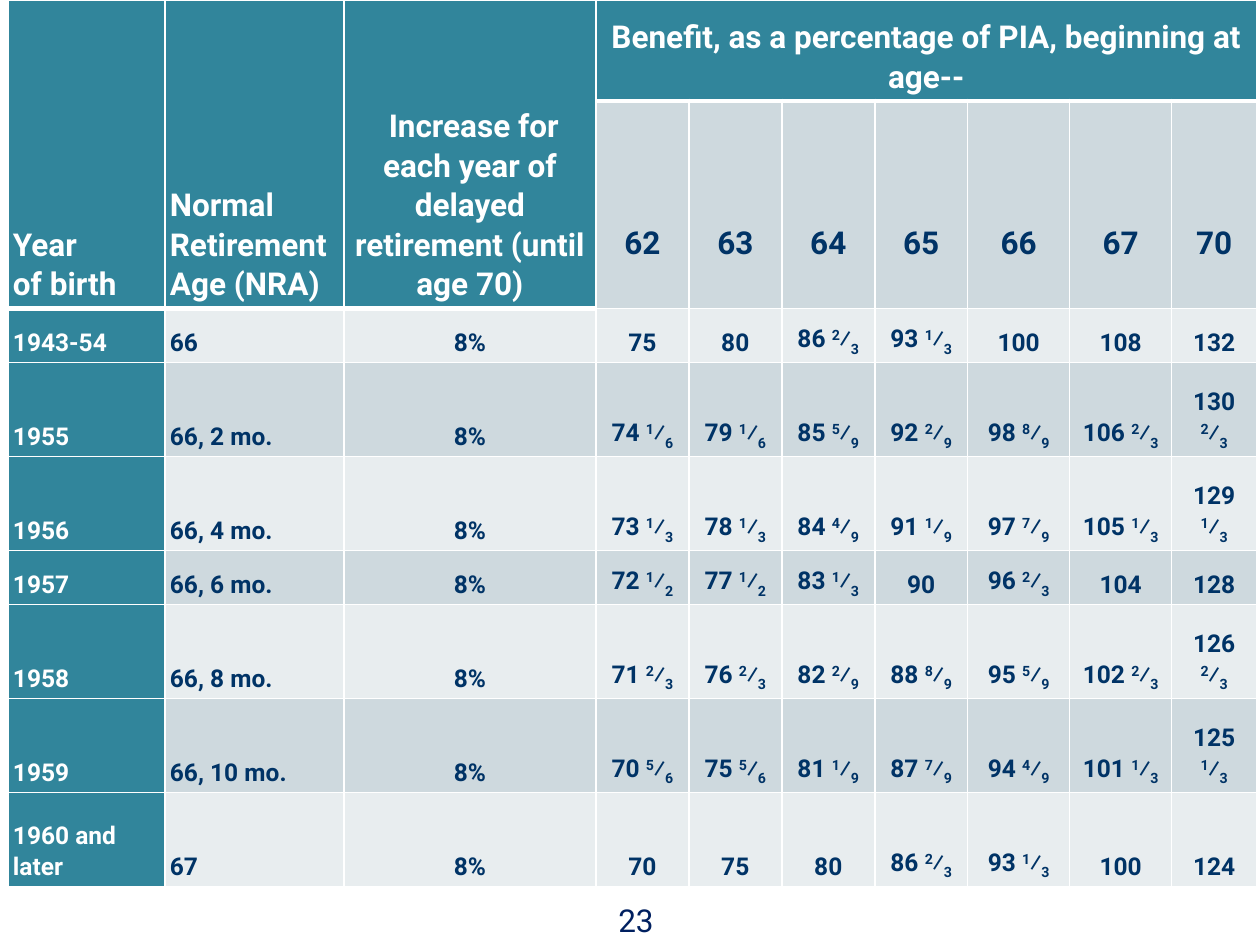
"""Build the slide of retirement benefits by year of birth and starting age."""
from pptx import Presentation
from pptx.dml.color import RGBColor
from pptx.enum.text import MSO_ANCHOR as ANCHOR, PP_ALIGN as ALIGN
from pptx.oxml import parse_xml
from pptx.oxml.ns import nsdecls
from pptx.util import Pt

PX = 914400 // 126
TEAL, NAVY, WHITE = "31859B", "003366", "FFFFFF"
BANDS = ["E8EDEF", "CED9DE"]


def add_run(p, text, size, color, bold=True, baseline=0):
    r = p.add_run()
    r.text = text
    r.font.name = "Roboto"
    r.font.size = Pt(size)
    r.font.bold = bold
    r.font.color.rgb = RGBColor.from_string(color)
    if baseline:
        r._r.get_or_add_rPr().set("baseline", str(baseline * 1000))


def fill_cell(cell, text, size, color, fill, align, bottom=5, rule=1):
    cell.margin_left = cell.margin_right = cell.margin_top = 5 * PX
    cell.margin_bottom = bottom * PX
    cell.vertical_anchor = ANCHOR.BOTTOM
    p = cell.text_frame.paragraphs[0]
    p.alignment = align
    p.line_spacing = 1.07
    whole, slash, below = text.partition("⁄")
    if slash:
        whole, above = whole.split(" ")
        parts = [(whole + " ", 0), (above, 30), (slash, 0), (below, -25)]
        for part, baseline in parts:
            add_run(p, part, size, color, baseline=baseline)
    elif text:
        for i, line in enumerate(text.split("\n")):
            if i:
                p.add_line_break()
            add_run(p, line, size, color)
    tcPr = cell._tc.get_or_add_tcPr()
    for side, width in [("L", 1), ("R", 1), ("T", 1), ("B", rule)]:
        tcPr.append(parse_xml(
            f'<a:ln{side} {nsdecls("a")} w="{Pt(width)}"><a:solidFill>'
            f'<a:srgbClr val="{WHITE}"/></a:solidFill></a:ln{side}>'))
    cell.fill.solid()
    cell.fill.fore_color.rgb = RGBColor.from_string(fill)


widths = [157, 179, 252, 93, 93, 93, 93, 102, 102, 85]
heights = [101, 120, 54, 94, 94, 54, 94, 94, 94]
headings = [
    "Year\nof birth",
    "Normal\nRetirement\nAge (NRA)",
    " Increase for each year of delayed retirement (until age 70)",
    "Benefit, as a percentage of PIA, beginning at age--",
]
ages = ["62", "63", "64", "65", "66", "67", "70"]
benefits = [
    ("1943-54", "66", "75|80|86 2⁄3|93 1⁄3|100|108|132"),
    ("1955", "66, 2 mo.", "74 1⁄6|79 1⁄6|85 5⁄9|92 2⁄9|98 8⁄9|106 2⁄3|130 2⁄3"),
    ("1956", "66, 4 mo.", "73 1⁄3|78 1⁄3|84 4⁄9|91 1⁄9|97 7⁄9|105 1⁄3|129 1⁄3"),
    ("1957", "66, 6 mo.", "72 1⁄2|77 1⁄2|83 1⁄3|90|96 2⁄3|104|128"),
    ("1958", "66, 8 mo.", "71 2⁄3|76 2⁄3|82 2⁄9|88 8⁄9|95 5⁄9|102 2⁄3|126 2⁄3"),
    ("1959", "66, 10 mo.", "70 5⁄6|75 5⁄6|81 1⁄9|87 7⁄9|94 4⁄9|101 1⁄3|125 1⁄3"),
    ("1960 and later", "67", "70|75|80|86 2⁄3|93 1⁄3|100|124"),
]

prs = Presentation()
prs.slide_width, prs.slide_height = 1260 * PX, 945 * PX
s = prs.slides.add_slide(prs.slide_layouts[6])

table = s.shapes.add_table(
    len(heights), len(widths), 8 * PX, 0, sum(widths) * PX, sum(heights) * PX).table
for column, width in zip(table.columns, widths):
    column.width = width * PX
for row, height in zip(table.rows, heights):
    row.height = height * PX

for c in range(3):
    table.cell(0, c).merge(table.cell(1, c))
table.cell(0, 3).merge(table.cell(0, 9))
for c in range(len(widths)):
    heading = headings[c] if c < len(headings) else ""
    align = ALIGN.LEFT if c < 2 else ALIGN.CENTER
    fill_cell(table.cell(0, c), heading, 18, WHITE, TEAL, align, rule=3)
    if c < 3:
        fill_cell(table.cell(1, c), "", 18, WHITE, TEAL, align, rule=3)
    else:
        fill_cell(table.cell(1, c), ages[c - 3], 18, NAVY, BANDS[1], align, bottom=46)

for i, (born, nra, values) in enumerate(benefits):
    for c, text in enumerate([born, nra, "8%"] + values.split("|")):
        color, fill = (NAVY, BANDS[i % 2]) if c else (WHITE, TEAL)
        align = ALIGN.LEFT if c < 2 else ALIGN.CENTER
        fill_cell(table.cell(i + 2, c), text, 14, color, fill, align)

sp = s.shapes.add_textbox(489 * PX, 895 * PX, 294 * PX, 50 * PX)
tf = sp.text_frame
tf.word_wrap = True
tf.vertical_anchor = ANCHOR.MIDDLE
p = tf.paragraphs[0]
p.alignment = ALIGN.CENTER
add_run(p, "23", 18, "002060", bold=False)

prs.save("out.pptx")
